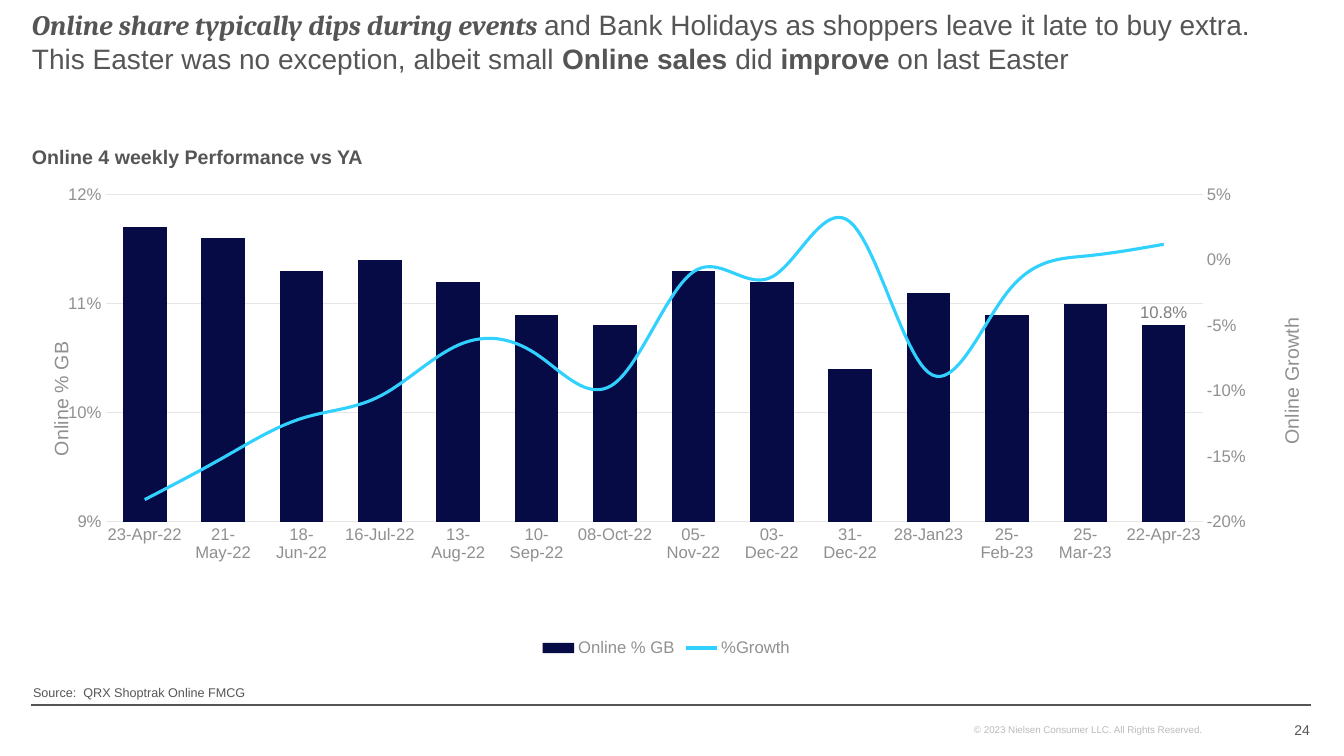
from copy import deepcopy

from lxml import etree
from pptx import Presentation
from pptx.chart.axis import CategoryAxis, ValueAxis
from pptx.chart.data import CategoryChartData
from pptx.dml.color import RGBColor
from pptx.enum.chart import (XL_CHART_TYPE, XL_LABEL_POSITION,
                             XL_LEGEND_POSITION, XL_MARKER_STYLE, XL_TICK_MARK)
from pptx.enum.shapes import MSO_CONNECTOR
from pptx.enum.text import MSO_ANCHOR, MSO_AUTO_SIZE, PP_ALIGN
from pptx.oxml import parse_xml
from pptx.oxml.ns import nsdecls, qn
from pptx.util import Pt

EMU_PER_PX = 914400 / 100.8
COLORS = {"text": "555555", "axis": "909090", "grid": "E6E6E6", "legal": "BBBBBB",
          "label": "7F7F7F", "share": "060A45", "growth": "30D1FF"}

PERIODS = ["23-Apr-22", "21-May-22", "18-Jun-22", "16-Jul-22", "13-Aug-22",
           "10-Sep-22", "08-Oct-22", "05-Nov-22", "03-Dec-22", "31-Dec-22",
           "28-Jan23", "25-Feb-23", "25-Mar-23", "22-Apr-23"]
ONLINE_SHARE = [0.117, 0.116, 0.113, 0.114, 0.112, 0.109, 0.108,
                0.113, 0.112, 0.104, 0.111, 0.109, 0.110, 0.108]
GROWTH = [-0.183, -0.151, -0.121, -0.104, -0.065, -0.072, -0.094,
          -0.009, -0.013, 0.029, -0.086, -0.025, 0.003, 0.012]
# Text, bold, italic, font
HEADLINE = [
    ("Online share typically dips during events ", True, True, "Cambria"),
    ("and Bank Holidays as shoppers leave it late to buy extra.  "
     "This Easter was no exception, albeit small ", False, False, "Arial"),
    ("Online sales ", True, False, "Arial"),
    ("did ", False, False, "Arial"),
    ("improve ", True, False, "Arial"),
    ("on last Easter", False, False, "Arial"),
]


def px(length):
    return round(length * EMU_PER_PX)


def color(name):
    return RGBColor.from_string(COLORS[name])


def style_font(font, size, color_name, bold=False):
    font.name, font.size, font.bold = "Arial", Pt(size), bold
    font.color.rgb = color(color_name)


def place(holder, left, top, width, height, anchor=MSO_ANCHOR.TOP):
    holder.left, holder.top = px(left), px(top)
    holder.width, holder.height = px(width), px(height)
    frame = holder.text_frame
    frame.word_wrap = True
    frame.auto_size = MSO_AUTO_SIZE.NONE
    frame.vertical_anchor = anchor
    frame.margin_left = frame.margin_right = 0
    frame.margin_top = frame.margin_bottom = px(5)
    return frame.paragraphs[0]


def add_label(slide, text, box, size, color_name, anchor=MSO_ANCHOR.TOP,
              align=PP_ALIGN.LEFT, bold=False):
    paragraph = place(slide.shapes.add_textbox(0, 0, 0, 0), *box, anchor)
    paragraph.text = text
    paragraph.alignment = align
    style_font(paragraph.font, size, color_name, bold)


def fill_headline(headline):
    paragraph = place(headline, 32, 20, 1277, 43, MSO_ANCHOR.MIDDLE)
    paragraph.alignment = PP_ALIGN.LEFT
    for text, bold, italic, font_name in HEADLINE:
        run = paragraph.add_run()
        run.text = text
        style_font(run.font, 20, "text", bold)
        run.font.italic, run.font.name = italic, font_name


def fill_source(source):
    paragraph = place(source, 33, 680, 1277, 48)
    paragraph.text = "Source:  QRX Shoptrak Online FMCG"
    properties = paragraph._p.get_or_add_pPr()
    properties.set("marL", "0")
    properties.set("indent", "0")
    etree.SubElement(properties, qn("a:buNone"))
    paragraph.space_before = Pt(0)
    style_font(paragraph.font, 9, "text")


def add_rule(slide):
    rule = slide.shapes.add_connector(MSO_CONNECTOR.STRAIGHT,
                                      px(31), px(705), px(1311), px(705))
    rule.line.color.rgb = color("text")
    rule.line.width = Pt(1)
    etree.SubElement(rule._element.spPr, qn("a:effectLst"))


def manual_layout(x, y, size=None):
    target = '<c:layoutTarget val="inner"/>' if size else ""
    extent = f'<c:w val="{size[0]}"/><c:h val="{size[1]}"/>' if size else ""
    return parse_xml(
        f'<c:layout {nsdecls("c")}><c:manualLayout>{target}'
        f'<c:xMode val="edge"/><c:yMode val="edge"/>'
        f'<c:x val="{x}"/><c:y val="{y}"/>{extent}</c:manualLayout></c:layout>')


def style_axis(axis):
    axis.major_tick_mark = axis.minor_tick_mark = XL_TICK_MARK.NONE
    style_font(axis.tick_labels.font, 12, "axis")


def scale_axis(axis, low, high, step, title, x, y):
    axis.minimum_scale, axis.maximum_scale, axis.major_unit = low, high, step
    axis_title = axis.axis_title
    paragraph = axis_title.text_frame.paragraphs[0]
    paragraph.text = title
    style_font(paragraph.font, 14, "axis")
    title_xml = axis_title._element
    for old in title_xml.findall(qn("c:layout")):
        title_xml.remove(old)
    title_xml.find(qn("c:tx")).addnext(manual_layout(x, y))


def move_growth_to_line(chart):
    """Turn the second series into a line plot on its own pair of axes."""
    bars = chart.plots[0]._element
    growth = bars.findall(qn("c:ser"))[1]
    for flag in growth.findall(qn("c:invertIfNegative")):
        growth.remove(flag)
    line_plot = parse_xml(
        f'<c:lineChart {nsdecls("c")}><c:grouping val="standard"/>'
        '<c:varyColors val="0"/><c:marker val="1"/>'
        '<c:axId val="5001"/><c:axId val="5002"/></c:lineChart>')
    line_plot.insert(2, growth)
    bars.addnext(line_plot)

    share_axis = chart.value_axis._element
    right = deepcopy(share_axis)
    hidden = deepcopy(chart.category_axis._element)
    share_axis.addnext(right)
    right.addnext(hidden)
    for axis, own, other in ((hidden, "5001", "5002"), (right, "5002", "5001")):
        axis.find(qn("c:axId")).set("val", own)
        axis.find(qn("c:crossAx")).set("val", other)
    right.find(qn("c:axPos")).set("val", "r")
    right.find(qn("c:crosses")).set("val", "max")
    CategoryAxis(hidden).visible = False
    growth_axis = ValueAxis(right)
    growth_axis.has_major_gridlines = False
    return growth_axis


def label_last_share(share):
    last = share.points[len(PERIODS) - 1].data_label
    style_font(last.font, 12, "label")
    last.position = XL_LABEL_POSITION.OUTSIDE_END
    share.data_labels.show_value = False
    index = share._element.find(".//" + qn("c:dLbl")).find(qn("c:idx"))
    index.addnext(parse_xml(
        f'<c:numFmt {nsdecls("c")} formatCode="0.0%" sourceLinked="0"/>'))


def add_performance_chart(slide):
    data = CategoryChartData(number_format="0.0%")
    data.categories = PERIODS
    data.add_series("Online % GB", ONLINE_SHARE)
    data.add_series("%Growth", GROWTH)
    chart = slide.shapes.add_chart(XL_CHART_TYPE.COLUMN_CLUSTERED, px(32), px(185),
                                   px(1277), px(476), data).chart
    style_font(chart.font, 10, "text")
    chart.has_title = False

    # Axes
    period_axis, share_axis = chart.category_axis, chart.value_axis
    style_axis(period_axis)
    style_axis(share_axis)
    share_axis.tick_labels.number_format = "0%"
    share_axis.tick_labels.number_format_is_linked = False
    share_axis.format.line.fill.background()
    for line in (period_axis.format.line, share_axis.major_gridlines.format.line):
        line.color.rgb = color("grid")
        line.width = Pt(0.75)
    growth_axis = move_growth_to_line(chart)
    scale_axis(share_axis, 0.09, 0.12, 0.01, "Online % GB", 0.01, 0.32)
    scale_axis(growth_axis, -0.2, 0.05, 0.05, "Online Growth", 0.98, 0.27)

    # Series
    bars, line_plot = chart.plots
    bars.gap_width = 80
    bars.vary_by_categories = False
    share, growth = bars.series[0], line_plot.series[0]
    share.format.fill.solid()
    share.format.fill.fore_color.rgb = color("share")
    label_last_share(share)
    growth.format.line.color.rgb = color("growth")
    growth.format.line.width = Pt(2.25)
    growth.marker.style = XL_MARKER_STYLE.NONE
    growth.smooth = True

    # Legend and plot area
    chart.has_legend = True
    chart.legend.position = XL_LEGEND_POSITION.BOTTOM
    chart.legend.include_in_layout = False
    style_font(chart.legend.font, 12, "axis")
    plot_area = bars._element.getparent()
    for old in plot_area.findall(qn("c:layout")):
        plot_area.remove(old)
    plot_area.insert(0, manual_layout(0.058, 0.02, (0.865, 0.688)))


def main():
    presentation = Presentation()
    presentation.slide_width, presentation.slide_height = px(1344), px(756)
    slide = presentation.slides.add_slide(presentation.slide_layouts[1])

    # Footer
    add_rule(slide)
    add_label(slide, "© 2023 Nielsen Consumer LLC. All Rights Reserved.",
              (974, 719, 286, 22), 7, "legal")
    add_label(slide, "24", (1211, 710, 99, 40), 10, "text",
              MSO_ANCHOR.MIDDLE, PP_ALIGN.RIGHT)
    fill_source(slide.placeholders[1])

    # Headline and chart
    fill_headline(slide.shapes.title)
    add_performance_chart(slide)
    add_label(slide, "Online 4 weekly Performance vs YA", (32, 140, 482, 34),
              14, "text", MSO_ANCHOR.MIDDLE, bold=True)
    presentation.save("out.pptx")


if __name__ == "__main__":
    main()
